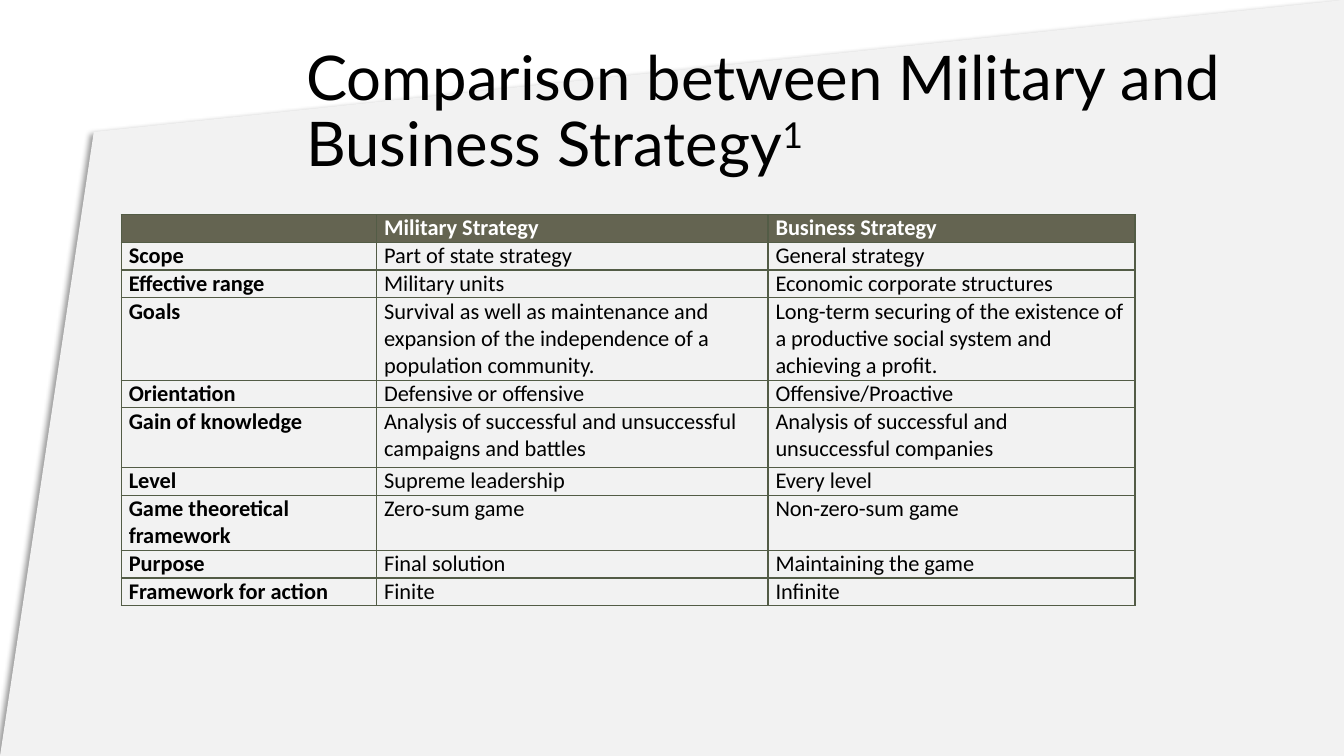
from lxml import etree
from pptx import Presentation
from pptx.dml.color import RGBColor
from pptx.enum import text
from pptx.oxml import ns
from pptx.util import Pt

# Content
TITLE = "Comparison between Military and Business Strategy"
FOOTNOTE_MARK = "1"
ROWS = [
    ("", "Military Strategy", "Business Strategy"),
    ("Scope", "Part of state strategy", "General strategy"),
    ("Effective range", "Military units", "Economic corporate structures"),
    ("Goals",
     "Survival as well as maintenance and expansion of the independence of a population community.",
     "Long-term securing of the existence of a productive social system and achieving a profit."),
    ("Orientation", "Defensive or offensive", "Offensive/Proactive"),
    ("Gain of knowledge",
     "Analysis of successful and unsuccessful campaigns and battles",
     "Analysis of successful and unsuccessful companies"),
    ("Level", "Supreme leadership", "Every level"),
    ("Game theoretical framework", "Zero-sum game", "Non-zero-sum game"),
    ("Purpose", "Final solution", "Maintaining the game"),
    ("Framework for action", "Finite", "Infinite"),
]

# Format, lengths in points
COLORS = {"white": "FFFFFF", "panel": "F2F2F2", "text": "000000",
          "header": "646451", "border": "535C46"}
WIDTH, HEIGHT = 960, 540
PANEL = [(67, 94.3), (WIDTH, 0), (WIDTH, HEIGHT), (0, HEIGHT)]
TITLE_BOX = {"left": 211.7, "top": 28.8, "width": 682.6, "height": 104.4}
TABLE_LEFT, TABLE_TOP = 86.6, 153.3
COLUMN_WIDTHS = [182.4, 279.6, 262.2]
ROW_HEIGHT = 19.8
TALL_ROWS = {3: 58.9, 5: 42.6, 7: 39.4}
CELL_FORMAT = {"margin_left": Pt(5.4), "margin_right": Pt(5.4),
               "margin_top": 0, "margin_bottom": 0}
PLAIN_TABLE_STYLE = "{2D5ABB26-0587-4C30-8999-92F81FD0307C}"


def color(name):
    return RGBColor.from_string(COLORS[name])


def add_element(parent, tag, **attributes):
    return etree.SubElement(parent, ns.qn(tag), attributes)


def apply(target, values):
    for name, value in values.items():
        setattr(target, name, value)


def add_run(paragraph, words, font, size, color_name, bold=False):
    run = paragraph.add_run()
    run.text = words
    apply(run.font, {"name": font, "size": Pt(size), "bold": bold})
    run.font.color.rgb = color(color_name)
    return run


def set_borders(cell):
    properties = cell._tc.get_or_add_tcPr()
    for side in ("a:lnL", "a:lnR", "a:lnT", "a:lnB"):
        line = add_element(properties, side, w=str(Pt(1)))
        fill = add_element(line, "a:solidFill")
        add_element(fill, "a:srgbClr", val=COLORS["border"])


presentation = Presentation()
apply(presentation, {"slide_width": Pt(WIDTH), "slide_height": Pt(HEIGHT)})
slide = presentation.slides.add_slide(presentation.slide_layouts[5])
slide.background.fill.solid()
slide.background.fill.fore_color.rgb = color("white")

# Slanted panel behind everything
builder = slide.shapes.build_freeform(Pt(PANEL[0][0]), Pt(PANEL[0][1]))
builder.add_line_segments([(Pt(x), Pt(y)) for x, y in PANEL[1:]], close=True)
panel = builder.convert_to_shape()
panel.fill.solid()
panel.fill.fore_color.rgb = color("panel")
panel.line.fill.background()
effects = add_element(panel._element.spPr, "a:effectLst")
shadow = add_element(effects, "a:outerShdw", blurRad=str(Pt(4)), dist=str(Pt(3)),
                     dir=str(135 * 60000), algn="tr", rotWithShape="0")
shade = add_element(shadow, "a:srgbClr", val=COLORS["text"])
add_element(shade, "a:alpha", val="40000")
slide.shapes._spTree.insert(2, panel._element)

# Title with a raised footnote mark
title = slide.shapes.title
apply(title, {name: Pt(value) for name, value in TITLE_BOX.items()})
apply(title.text_frame, {"word_wrap": True, "auto_size": text.MSO_AUTO_SIZE.NONE,
                         "vertical_anchor": text.MSO_ANCHOR.MIDDLE})
heading = title.text_frame.paragraphs[0]
apply(heading, {"alignment": text.PP_ALIGN.LEFT, "line_spacing": 0.9})
add_run(heading, TITLE, "Lato", 44, "text")
mark = add_run(heading, FOOTNOTE_MARK, "Lato", 44, "text")
mark.font._element.set("baseline", "30000")

# Comparison table
heights = [TALL_ROWS.get(index, ROW_HEIGHT) for index in range(len(ROWS))]
frame = slide.shapes.add_table(len(ROWS), len(COLUMN_WIDTHS), Pt(TABLE_LEFT), Pt(TABLE_TOP),
                               Pt(sum(COLUMN_WIDTHS)), Pt(sum(heights)))
table = frame.table
table.horz_banding = False
table._tbl.tblPr.find(ns.qn("a:tableStyleId")).text = PLAIN_TABLE_STYLE
for column, width in zip(table.columns, COLUMN_WIDTHS):
    column.width = Pt(width)
for row_index, (row, height, entries) in enumerate(zip(table.rows, heights, ROWS)):
    row.height = Pt(height)
    is_header = row_index == 0
    for column_index, (cell, words) in enumerate(zip(row.cells, entries)):
        apply(cell, CELL_FORMAT)
        set_borders(cell)
        if is_header:
            cell.fill.solid()
            cell.fill.fore_color.rgb = color("header")
        else:
            cell.fill.background()
        paragraph = cell.text_frame.paragraphs[0]
        if words:
            add_run(paragraph, words, "Calibri", 16, "white" if is_header else "text",
                    bold=is_header or column_index == 0)
        else:
            add_element(paragraph._p, "a:endParaRPr", sz="1600")

presentation.save("out.pptx")
